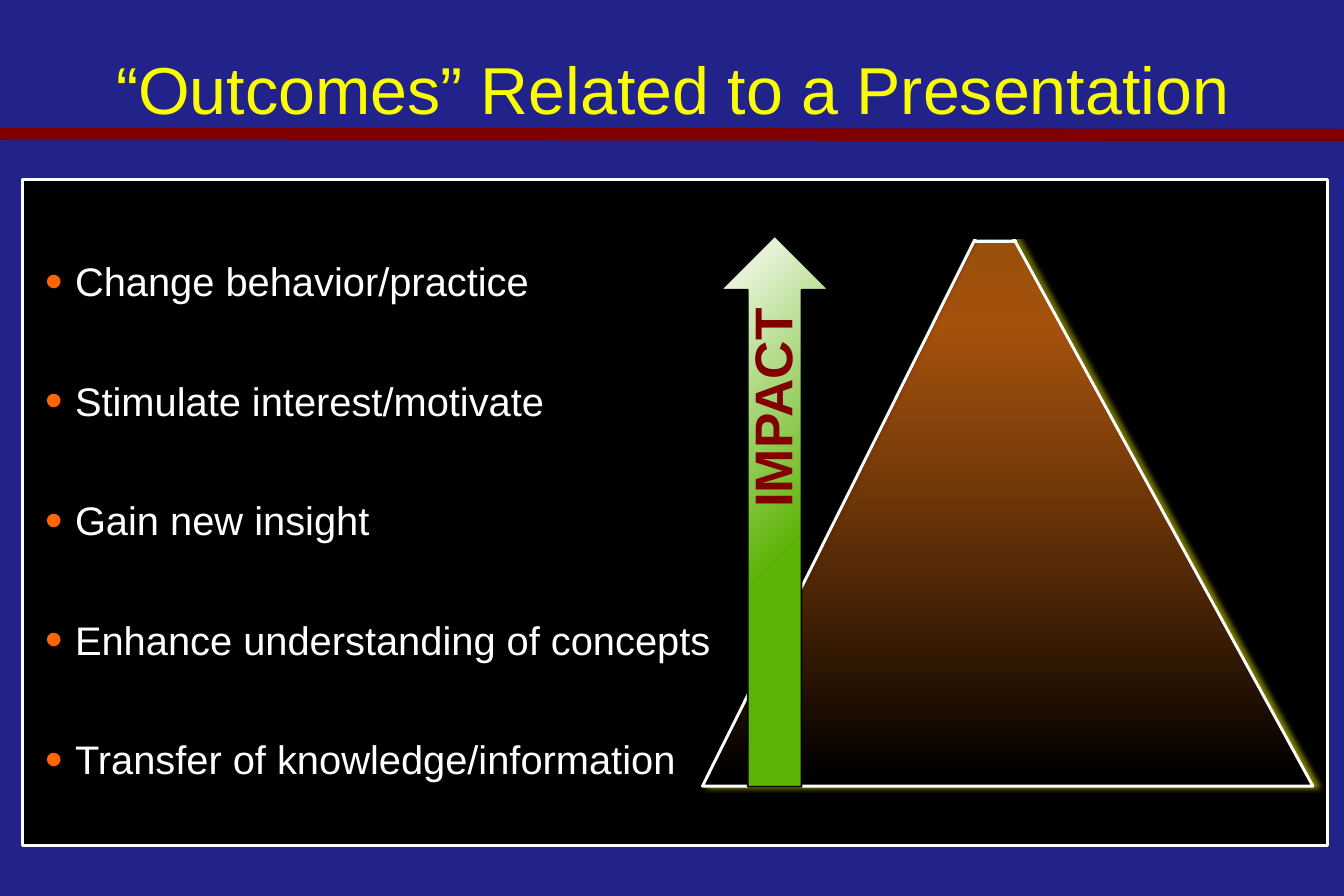
import lxml.etree
import pptx
import pptx.dml.color
import pptx.enum.shapes
import pptx.enum.text
import pptx.oxml
import pptx.oxml.ns
import pptx.util
from dataclasses import dataclass

Inches = pptx.util.Inches
Pt = pptx.util.Pt
ShapeKind = pptx.enum.shapes.MSO_SHAPE

TITLE = "“Outcomes” Related to a Presentation"
OUTCOMES = [
    "Change behavior/practice",
    "Stimulate interest/motivate",
    "Gain new insight",
    "Enhance understanding of concepts",
    "Transfer of knowledge/information",
]
ARROW_LABEL = "IMPACT"


@dataclass(frozen=True)
class Theme:
    font: str = "Arial"
    background: str = "22228B"
    panel: str = "000000"
    light: str = "FFFFFF"
    title: str = "FAFD00"
    accent: str = "800000"
    bullet: str = "FF6600"
    glow: str = "FFFF00"
    pyramid: str = "B34D10"
    arrow: str = "5CB305"
    title_size: int = 40
    label_size: int = 32
    body_size: int = 24


THEME = Theme()
PYRAMID_STOPS = [(0, THEME.pyramid, 64), (21, THEME.pyramid, 81), (98, THEME.panel, 100)]
ARROW_STOPS = [(42, THEME.arrow, 100), (100, THEME.light, 100)]
LINEAR_DOWN = '<a:lin ang="5400000" scaled="0"/>'
FROM_CORNER = '<a:path path="circle"><a:fillToRect l="100000" t="100000"/></a:path>'


def color(value):
    return pptx.dml.color.RGBColor.from_string(value)


def xml(tag, attributes="", content=""):
    namespace = pptx.oxml.ns.nsdecls("a")
    return pptx.oxml.parse_xml(f"<a:{tag} {namespace} {attributes}>{content}</a:{tag}>")


def box(place):
    return [Inches(length) for length in place]


def add_shape(slide, kind, place, fill=None, line=None, width=1):
    shape = slide.shapes.add_shape(kind, *box(place))
    shape.shadow.inherit = False
    if fill:
        shape.fill.solid()
        shape.fill.fore_color.rgb = color(fill)
    if line:
        shape.line.color.rgb = color(line)
        shape.line.width = Pt(width)
    else:
        shape.line.fill.background()
    return shape


def set_gradient(shape, stops, direction):
    stop_list = "".join(
        f'<a:gs pos="{position * 1000}"><a:srgbClr val="{value}">'
        f'<a:alpha val="{opacity * 1000}"/></a:srgbClr></a:gs>'
        for position, value, opacity in stops
    )
    geometry = shape._element.spPr.find(pptx.oxml.ns.qn("a:prstGeom"))
    geometry.addnext(xml("gradFill", 'rotWithShape="1"', f"<a:gsLst>{stop_list}</a:gsLst>{direction}"))


def add_line(slide, start, end, value, width):
    line = slide.shapes.add_connector(
        pptx.enum.shapes.MSO_CONNECTOR.STRAIGHT, *box(start + end))
    line.line.color.rgb = color(value)
    line.line.width = Pt(width)
    line._element.spPr.append(xml("effectLst"))


def format_text(paragraph, size, value, bold=False):
    for run in paragraph.runs:
        run.font.name = THEME.font
        run.font.size = Pt(size)
        run.font.bold = bold
        run.font.color.rgb = color(value)


def set_heading(shape, text, size, value, bold=False):
    frame = shape.text_frame
    frame.text = text
    frame.word_wrap = True
    frame.vertical_anchor = pptx.enum.text.MSO_ANCHOR.MIDDLE
    paragraph = frame.paragraphs[0]
    paragraph.alignment = pptx.enum.text.PP_ALIGN.CENTER
    paragraph.line_spacing = 0.8
    format_text(paragraph, size, value, bold)


def add_outcomes(slide):
    frame = slide.shapes.add_textbox(*box((0.15, 1.67, 7.74, 5))).text_frame
    frame.word_wrap = True
    frame.text = "\n".join(OUTCOMES)
    for paragraph in frame.paragraphs:
        paragraph.line_spacing = Pt(60)
        paragraph.space_before = Pt(12)
        format_text(paragraph, THEME.body_size, THEME.light)
        properties = paragraph._p.get_or_add_pPr()
        properties.set("marL", str(Inches(0.38)))
        properties.set("indent", str(Inches(-0.25)))
        properties.append(xml("buClr", content=f'<a:srgbClr val="{THEME.bullet}"/>'))
        properties.append(xml("buSzPct", 'val="125000"'))
        properties.append(xml("buFont", f'typeface="{THEME.font}"'))
        properties.append(xml("buChar", 'char="•"'))


def add_pyramid(slide):
    pyramid = add_shape(slide, ShapeKind.ISOSCELES_TRIANGLE, (5.88, 1.69, 5.11, 4.89),
                        line=THEME.light, width=1.75)
    pyramid.adjustments[0] = 0.477
    set_gradient(pyramid, PYRAMID_STOPS, LINEAR_DOWN)
    effects = pyramid._element.spPr.find(pptx.oxml.ns.qn("a:effectLst"))
    effects.append(xml(
        "outerShdw",
        f'blurRad="{Pt(3)}" dist="{Pt(3)}" dir="{356 * 60000}" algn="ctr" rotWithShape="0"',
        f'<a:srgbClr val="{THEME.glow}"><a:alpha val="50000"/></a:srgbClr>'))


def add_impact_arrow(slide):
    arrow = add_shape(slide, ShapeKind.LEFT_ARROW, (4.18, 3.83, 4.61, 0.9), line=THEME.panel)
    arrow.rotation = 270
    arrow._element.spPr.xfrm.set("flipH", "1")
    set_gradient(arrow, ARROW_STOPS, FROM_CORNER)
    label = slide.shapes.add_textbox(*box((4.88, 2.79, 3.25, 1.25)))
    label.rotation = 270
    set_heading(label, ARROW_LABEL, THEME.label_size, THEME.accent, bold=True)


def main():
    presentation = pptx.Presentation()
    presentation.slide_width, presentation.slide_height = box((11.25, 7.5))
    slide = presentation.slides.add_slide(presentation.slide_layouts[5])
    slide.background.fill.solid()
    slide.background.fill.fore_color.rgb = color(THEME.background)

    title = slide.shapes.title
    title.left, title.top, title.width, title.height = box((0.17, 0.17, 10.92, 1.25))
    set_heading(title, TITLE, THEME.title_size, THEME.title)

    add_shape(slide, ShapeKind.RECTANGLE, (0.19, 1.5, 10.92, 5.58), THEME.panel, THEME.light, 2)
    add_outcomes(slide)
    add_pyramid(slide)
    add_shape(slide, ShapeKind.RECTANGLE, (8.02, 1.53, 0.69, 0.47), THEME.panel)
    add_line(slide, (0, 1.12), (11.25, 1.13), THEME.accent, 7.5)
    add_line(slide, (8.16, 2.02), (8.51, 2.02), THEME.light, 2)
    add_impact_arrow(slide)
    presentation.save("out.pptx")


if __name__ == "__main__":
    main()
